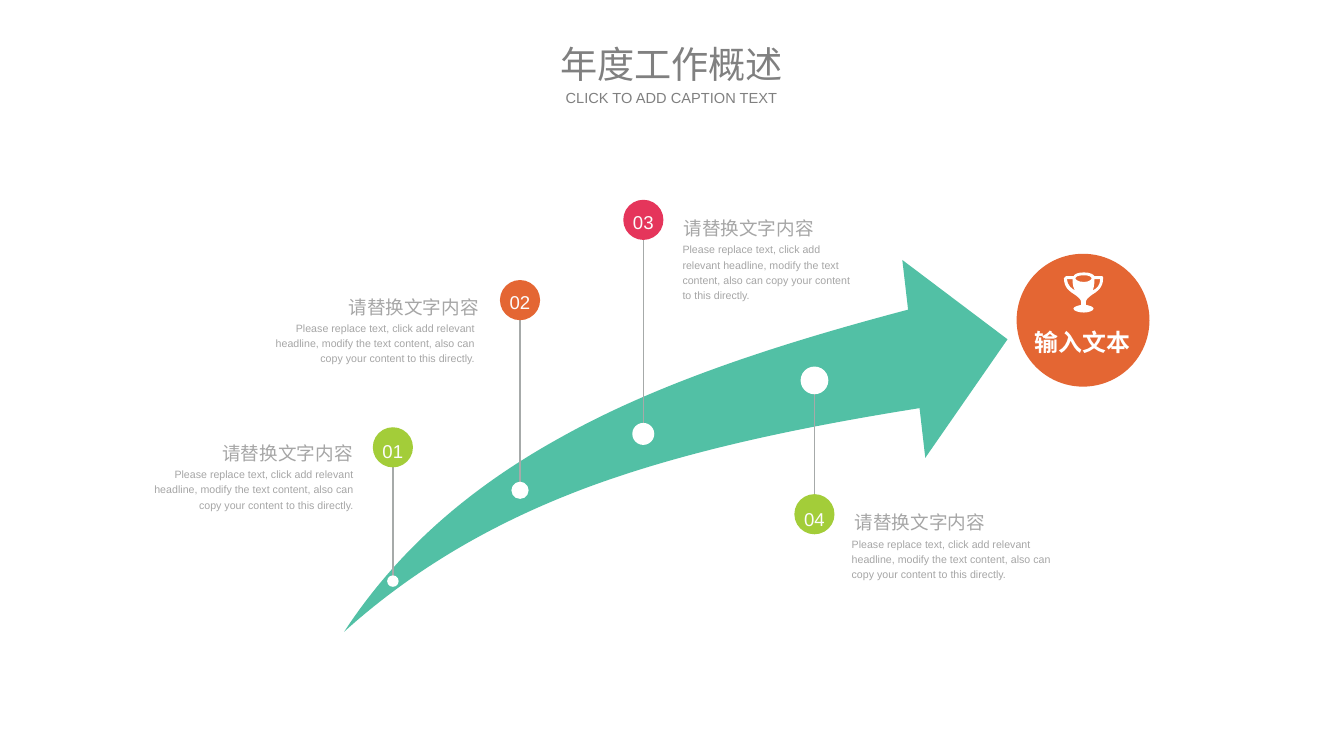
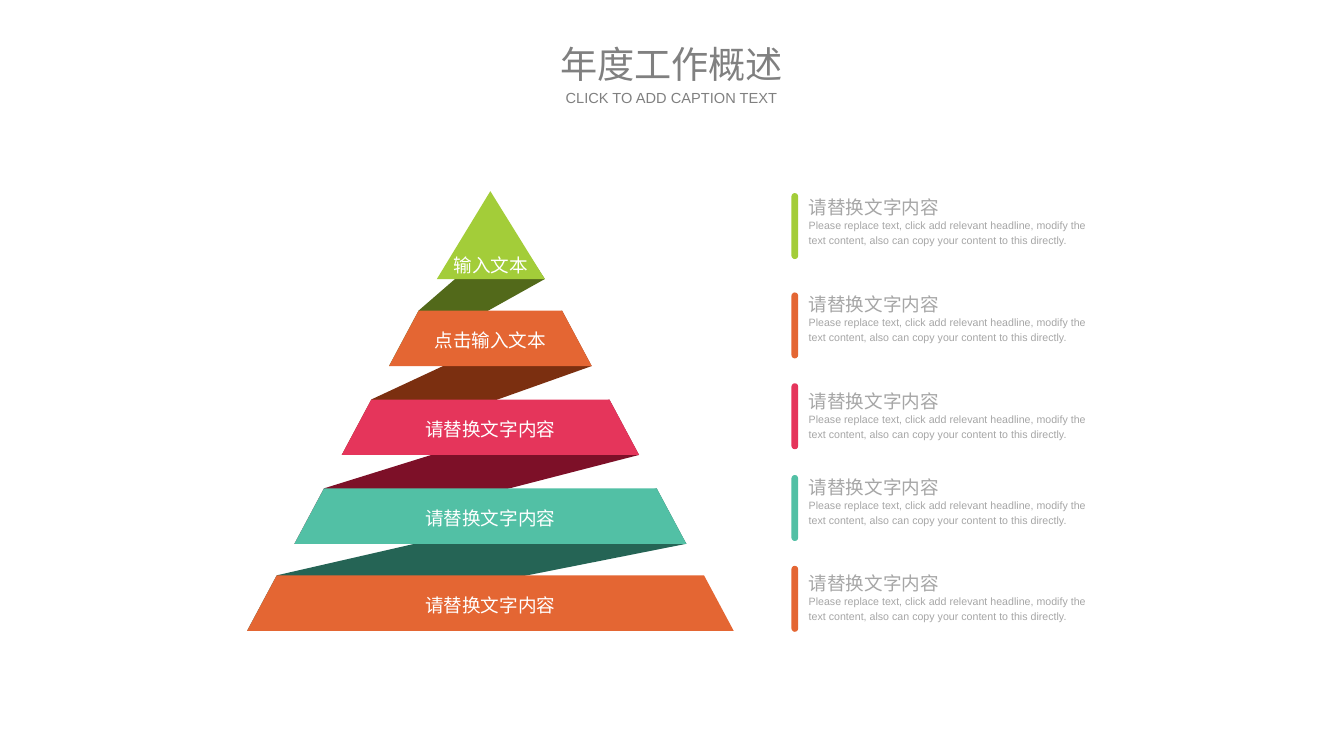
"""Build a growth arrow slide and a ribbon pyramid slide."""
from lxml import etree
from pptx import Presentation
from pptx.dml.color import RGBColor
from pptx.enum.shapes import MSO_CONNECTOR, MSO_SHAPE
from pptx.enum.text import MSO_ANCHOR, PP_ALIGN
from pptx.oxml.ns import qn
from pptx.util import Emu, Pt

PX = 9144
OVAL, ROUND = MSO_SHAPE.OVAL, MSO_SHAPE.ROUNDED_RECTANGLE
LINE = MSO_CONNECTOR.STRAIGHT
TOP, MID = MSO_ANCHOR.TOP, MSO_ANCHOR.MIDDLE
LEFT, MIDDLE, RIGHT = PP_ALIGN.LEFT, PP_ALIGN.CENTER, PP_ALIGN.RIGHT

HEX = {
    "lime": "A3CD39", "orange": "E46633", "rose": "E5355B", "teal": "52C0A5",
    "moss": "52691A", "brown": "7B2F10", "wine": "7D1028", "pine": "256455",
    "white": "FFFFFF", "pale": "FCFCFC", "gray": "808080", "soft": "A6A6A6",
    "rule": "A6AAA9",
}
STYLES = {
    "title": ({"size": Pt(28)}, "gray", 1),
    "caption": ({"size": Pt(11)}, "gray", 1),
    "head": ({"size": Pt(14)}, "soft", 1.2),
    "body": ({"size": Pt(8)}, "soft", 1.2),
    "number": ({"size": Pt(14)}, "pale", 1.2),
    "tier": ({"size": Pt(14)}, "white", 1.2),
    "goal": ({"size": Pt(18), "bold": True}, "white", 1.3),
}
HEAD = "请替换文字内容"
BODY = ("Please replace text, click add relevant headline, modify the text "
        "content, also can copy your content to this directly.")

ARROW = [
    [(360, 661), (415, 577, 490, 511, 586, 458), (684, 403, 806, 362, 950, 324),
     (944, 272), (1054, 355), (968, 479), (962, 427),
     (830, 448, 715, 473, 617, 509), (517, 546, 432, 596, 360, 661)],
]
CUP = [
    [(1116, 292), (1122, 292), (1122, 298, 1123, 302, 1125, 304),
     (1121, 302, 1117, 299, 1116, 292)],
    [(1134, 288), (1140, 288, 1142, 290, 1142, 291),
     (1142, 292, 1140, 295, 1134, 295), (1127, 295, 1125, 292, 1125, 291),
     (1125, 290, 1127, 288, 1134, 288)],
    [(1143, 304), (1144, 302, 1145, 298, 1145, 292), (1151, 292),
     (1151, 299, 1147, 302, 1143, 304)],
    [(1136, 316), (1136, 313, 1139, 311, 1143, 308),
     (1148, 305, 1154, 301, 1154, 291), (1154, 290, 1154, 289, 1153, 289),
     (1145, 289), (1144, 287, 1140, 285, 1134, 285),
     (1127, 285, 1124, 287, 1123, 289), (1115, 289),
     (1114, 289, 1113, 290, 1113, 291), (1113, 301, 1119, 305, 1124, 308),
     (1128, 311, 1131, 313, 1131, 316), (1131, 319),
     (1127, 320, 1123, 321, 1123, 323), (1123, 325, 1128, 327, 1134, 327),
     (1139, 327, 1144, 325, 1144, 323), (1144, 321, 1141, 320, 1136, 319)],
]
PINS = [
    ("01", 454, "lime", 411, 468, 608, 12, RIGHT, (210, 459, 159, 26), (144, 487, 226, 47)),
    ("02", 298, "orange", 544, 314, 513, 18, RIGHT, (329, 306, 172, 26), (271, 334, 226, 47)),
    ("03", 215, "rose", 673, 230, 454, 23, LEFT, (715, 222, 147, 28), (714, 252, 187, 63)),
    ("04", 525, "lime", 852, 538, 398, 29, LEFT, (894, 530, 147, 28), (891, 560, 226, 47)),
]
TIERS = [
    ("点击输入文本", "orange", "moss", 325),
    (HEAD, "rose", "brown", 418),
    (HEAD, "teal", "wine", 511),
    (HEAD, "orange", "pine", 602),
]
NOTES = [("lime", 202, 200), ("orange", 306, 302), ("rose", 401, 403),
         ("teal", 497, 493), ("orange", 592, 594)]


def emu(*nums):
    """Turn px into EMU."""
    return [Emu(round(n * PX)) for n in nums]


def color(name):
    """Look up a colour."""
    return RGBColor.from_string(HEX[name])


def paint(shape, fill):
    """Give a shape a flat fill with no line or shadow."""
    shape.shadow.inherit = False
    shape.fill.solid()
    shape.fill.fore_color.rgb = color(fill)
    shape.line.fill.background()
    return shape


def write(shape, text, style, align=MIDDLE, anchor=MID, top=0):
    """Put one styled paragraph into a shape."""
    font, ink, space = STYLES[style]
    frame = shape.text_frame
    room = {"margin_left": 0, "margin_right": 0, "margin_bottom": 0,
            "margin_top": emu(top)[0], "word_wrap": True, "vertical_anchor": anchor}
    for key, val in room.items():
        setattr(frame, key, val)
    para = frame.paragraphs[0]
    para.alignment, para.line_spacing = align, space
    run = para.add_run()
    run.text = text
    for key, val in {"name": "Arial", **font}.items():
        setattr(run.font, key, val)
    run.font.color.rgb = color(ink)


def label(slide, box, *args, **more):
    """Add a text box."""
    write(slide.shapes.add_textbox(*emu(*box)), *args, **more)


def disc(slide, x, y, size, fill):
    """Add a circle by its centre."""
    box = emu(x - size / 2, y - size / 2, size, size)
    return paint(slide.shapes.add_shape(OVAL, *box), fill)


def bend(shape, loops):
    """Join each three line points of a curved part into one cubic curve."""
    legs = iter(list(shape._element.iter(qn("a:lnTo"))))
    for loop in loops:
        for part in loop[1:]:
            group = [next(legs) for _ in range(len(part) // 2)]
            if len(group) == 1:
                continue
            curve = etree.Element(qn("a:cubicBezTo"))
            group[0].addprevious(curve)
            for leg in group:
                curve.append(leg[0])
                leg.getparent().remove(leg)


def outline(slide, loops, fill):
    """Add a closed outline of straight and curved parts."""
    pen = None
    for loop in loops:
        dots = [emu(*part[i:i + 2]) for part in loop for i in range(0, len(part), 2)]
        if pen is None:
            pen = slide.shapes.build_freeform(*dots[0])
        else:
            pen.move_to(*dots[0])
        pen.add_line_segments(dots[1:], close=True)
    shape = paint(pen.convert_to_shape(), fill)
    bend(shape, loops)
    return shape


def stem(slide, x, start, end):
    """Add a thin upright line."""
    line = slide.shapes.add_connector(LINE, *emu(x, start, x, end))
    line.line.color.rgb = color("rule")
    line.line.width = Pt(1)
    etree.SubElement(line._element.spPr, qn("a:effectLst"))


def pin(slide, num, row, fill, x, y, base, size, align, head, body):
    """Add a numbered badge, its stem, its dot and its text."""
    stem(slide, x, base, y)
    disc(slide, x, y, 42, fill)
    disc(slide, x, base, size, "white")
    label(slide, head, HEAD, "head", align)
    label(slide, body, BODY, "body", align, TOP)
    label(slide, (x - 13, row, 26, 31), num, "number")


def note(slide, fill, bar, y):
    """Add a coloured bar with a heading and text."""
    shape = paint(slide.shapes.add_shape(ROUND, *emu(828, bar, 7, 69)), fill)
    shape.adjustments[0] = 0.5
    label(slide, (846, y, 295, 28), HEAD, "head", LEFT, TOP)
    label(slide, (846, y + 26, 295, 31), BODY, "body", LEFT, TOP)


def pyramid(slide):
    """Add the folded ribbons, then the tiers over them."""
    bands, folds = [], []
    last = [(536, 240), (570, 292)]
    for i, (text, fill, dark, y) in enumerate(TIERS):
        half = 106 + 49.5 * i
        left = [(513 - half + 31, y), (513 - half, y + 58)]
        right = [(513 + half - 31, y), (513 + half, y + 58)]
        folds.append(([last[0], *left, last[1]], dark))
        bands.append(([*left, *right[::-1]], fill, text))
        last = right
    for loop, dark in folds:
        outline(slide, [loop], dark)
    tip = outline(slide, [[(513, 200), (570, 292), (457, 292)]], "lime")
    write(tip, "输入文本", "tier", top=57)
    for loop, fill, text in bands:
        write(outline(slide, [loop], fill), text, "tier")


def page(deck):
    """Add a blank slide with the shared title."""
    slide = deck.slides.add_slide(deck.slide_layouts[6])
    label(slide, (576, 42, 253, 49), "年度工作概述", "title")
    label(slide, (576, 93, 253, 19), "CLICK TO ADD CAPTION TEXT", "caption")
    return slide


def main():
    """Build and save the deck."""
    deck = Presentation()
    deck.slide_width, deck.slide_height = emu(1406, 791)

    growth = page(deck)
    outline(growth, ARROW, "teal")
    for item in PINS:
        pin(growth, *item)
    disc(growth, 1133, 335, 139, "orange")
    outline(growth, CUP, "white")
    label(growth, (1081, 333, 102, 41), "输入文本", "goal")

    tiers = page(deck)
    pyramid(tiers)
    for item in NOTES:
        note(tiers, *item)
    deck.save("out.pptx")


if __name__ == "__main__":
    main()
